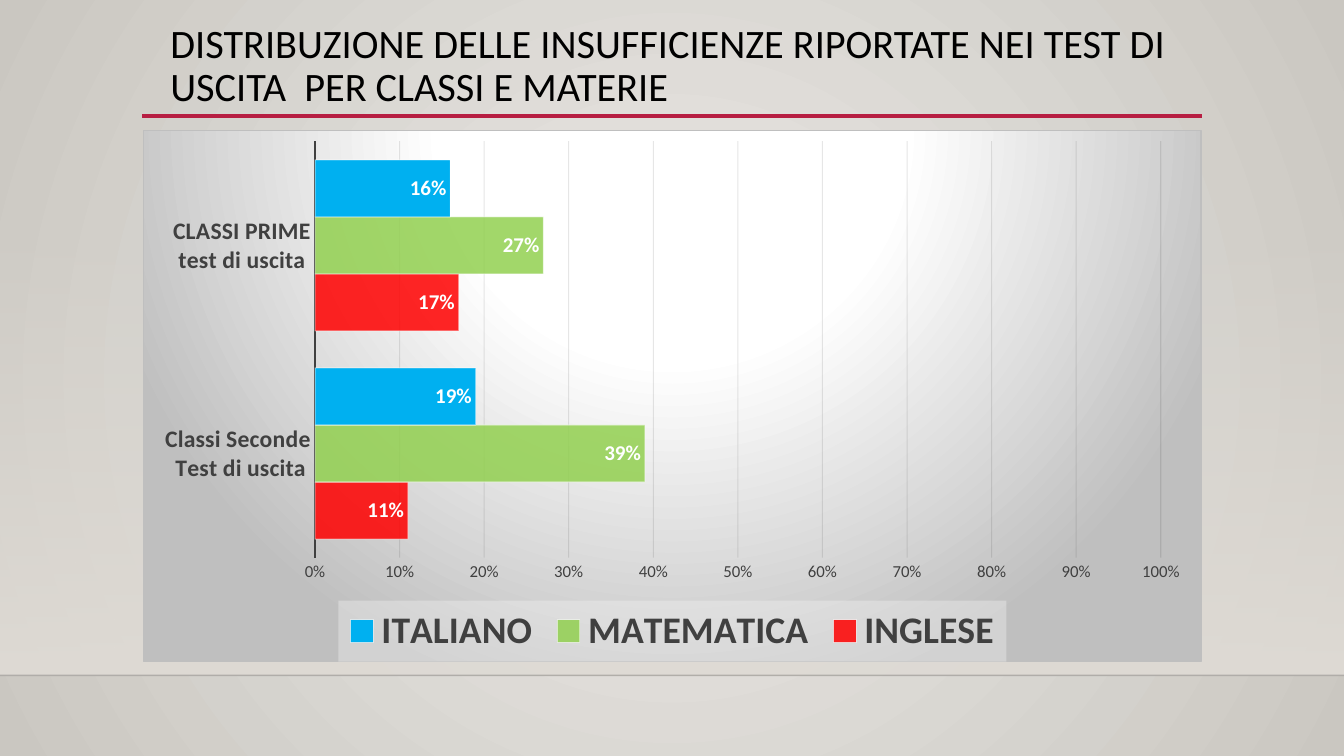
from dataclasses import dataclass

import lxml.etree
import pptx
import pptx.chart.data
import pptx.dml.color
import pptx.enum.chart
import pptx.enum.shapes
import pptx.enum.text
import pptx.oxml
import pptx.oxml.ns
import pptx.util

Cm, Pt = pptx.util.Cm, pptx.util.Pt
qn = pptx.oxml.ns.qn
NS = " ".join(pptx.oxml.ns.nsdecls(p) for p in ("a", "c"))
WIDE, HIGH = 33.87, 19.05
FONT, DARK = "Calibri", "404040"


@dataclass
class Rule:
    left: float
    right: float
    top: float
    color: str
    width: float
    alpha: int = 100


@dataclass
class Subject:
    name: str
    color: str
    alpha: int
    vals: tuple[float, float]


RULES = [
    Rule(0, WIDE, 17.02, "000001", 1, 20),
    Rule(3.58, 30.28, 2.92, "B71E42", 2.5),
]
CLASSES = ["Classi Seconde\n Test di uscita", "CLASSI PRIME\ntest di uscita"]
SUBJECTS = [
    Subject("INGLESE", "FF0000", 85, (0.11, 0.17)),
    Subject("MATEMATICA", "92D050", 85, (0.39, 0.27)),
    Subject("ITALIANO", "00B0F0", 100, (0.19, 0.16)),
]


def rgb(color: str):
    return pptx.dml.color.RGBColor.from_string(color)


def fade(fill, color: str, alpha: int = 100) -> None:
    """Fill with a solid colour at the given opacity in percent."""
    fill.solid()
    fill.fore_color.rgb = rgb(color)
    if alpha < 100:
        node = fill._xPr.find(qn("a:solidFill"))[0]
        lxml.etree.SubElement(node, qn("a:alpha")).set("val", str(alpha * 1000))


def stroke(line, color: str, width: float, alpha: int = 100) -> None:
    fade(line.fill, color, alpha)
    line.width = Pt(width)


def blend(stops: list[tuple], shape: str):
    """Gradient fill from (position, colour, opacity) stops."""
    marks = "".join(
        f'<a:gs pos="{pos * 1000}"><a:srgbClr val="{color}">'
        f'<a:alpha val="{alpha * 1000}"/></a:srgbClr></a:gs>'
        for pos, color, alpha in stops
    )
    return pptx.oxml.parse_xml(
        f"<a:gradFill {NS} rotWithShape=\"1\"><a:gsLst>{marks}</a:gsLst>{shape}</a:gradFill>"
    )


def circle(left: int, top: int, right: int, bottom: int) -> str:
    return (
        f'<a:path path="circle"><a:fillToRect l="{left * 1000}" t="{top * 1000}" '
        f'r="{right * 1000}" b="{bottom * 1000}"/></a:path>'
    )


def swap(fill, grad) -> None:
    """Put a gradient in place of a solid fill."""
    fill.solid()
    old = fill._xPr.find(qn("a:solidFill"))
    old.getparent().replace(old, grad)


def style(font, size: float, color: str, bold: bool = False) -> None:
    font.name, font.size, font.bold = FONT, Pt(size), bold
    font.color.rgb = rgb(color)


def write(frame, text: str, *, size: float, color: str, space: float = 1) -> None:
    frame.word_wrap = True
    frame.auto_size = pptx.enum.text.MSO_AUTO_SIZE.NONE
    frame.vertical_anchor = pptx.enum.text.MSO_ANCHOR.TOP
    para = frame.paragraphs[0]
    para.alignment = pptx.enum.text.PP_ALIGN.LEFT
    para.line_spacing = space
    run = para.add_run()
    run.text = text
    style(run.font, size, color)


def place(shape, left: float, top: float, width: float, height: float) -> None:
    shape.left, shape.top = Cm(left), Cm(top)
    shape.width, shape.height = Cm(width), Cm(height)


def draw_rule(slide, rule: Rule) -> None:
    line = slide.shapes.add_connector(
        pptx.enum.shapes.MSO_CONNECTOR.STRAIGHT,
        Cm(rule.left), Cm(rule.top), Cm(rule.right), Cm(rule.top),
    )
    stroke(line.line, rule.color, rule.width, rule.alpha)
    lxml.etree.SubElement(line._element.spPr, qn("a:effectLst"))


def draw_back(slide) -> None:
    swap(
        slide.background.fill,
        blend([(0, "ECEAE7", 100), (100, "CAC7C1", 100)], circle(50, 50, 50, 50)),
    )
    band = slide.shapes.add_shape(
        pptx.enum.shapes.MSO_SHAPE.RECTANGLE, 0, Cm(5.61), Cm(WIDE), Cm(11.41)
    )
    band.shadow.inherit = False
    band.line.fill.background()
    swap(
        band.fill,
        blend([(0, "DFDBD5", 0), (100, "DFDBD5", 100)], '<a:lin ang="5400000" scaled="0"/>'),
    )


def set_panel(chart) -> None:
    """Fill the chart and legend areas and fix the plot position."""
    area = pptx.oxml.parse_xml(
        f'<c:spPr {NS}><a:ln w="9525"><a:solidFill><a:srgbClr val="BFBFBF"/>'
        "</a:solidFill></a:ln></c:spPr>"
    )
    stops = [(0, "FFFFFF", 100), (39, "FFFFFF", 100), (100, "BFBFBF", 100)]
    area.insert(0, blend(stops, circle(50, -80, 50, 180)))
    root = chart._chartSpace
    root.find(qn("c:txPr")).addprevious(area)

    key = pptx.oxml.parse_xml(
        f'<c:spPr {NS}><a:solidFill><a:srgbClr val="F2F2F2">'
        '<a:alpha val="39000"/></a:srgbClr></a:solidFill></c:spPr>'
    )
    chart.legend._element.find(qn("c:txPr")).addprevious(key)

    plot = root.find(qn("c:chart")).find(qn("c:plotArea"))
    for old in plot.findall(qn("c:layout")):
        plot.remove(old)
    sizes = {"x": 0.162, "y": 0.02, "w": 0.8, "h": 0.784}
    parts = "".join(f'<c:{k} val="{v}"/>' for k, v in sizes.items())
    plot.insert(0, pptx.oxml.parse_xml(
        f'<c:layout {NS}><c:manualLayout><c:layoutTarget val="inner"/>'
        f'<c:xMode val="edge"/><c:yMode val="edge"/>{parts}</c:manualLayout></c:layout>'
    ))


def set_axes(chart) -> None:
    none = pptx.enum.chart.XL_TICK_MARK.NONE
    names, scale = chart.category_axis, chart.value_axis
    for axis, size, bold in ((names, 16.9, True), (scale, 12, False)):
        axis.major_tick_mark = axis.minor_tick_mark = none
        style(axis.tick_labels.font, size, DARK, bold)
    stroke(names.format.line, DARK, 1.5)
    scale.format.line.fill.background()
    scale.minimum_scale, scale.maximum_scale, scale.major_unit = 0, 1, 0.1
    scale.tick_labels.number_format = "0%"
    scale.tick_labels.number_format_is_linked = False
    stroke(scale.major_gridlines.format.line, "0D0D0D", 0.75, 10)


def draw_chart(slide) -> None:
    data = pptx.chart.data.CategoryChartData(number_format="0%")
    data.categories = CLASSES
    for item in SUBJECTS:
        data.add_series(item.name, item.vals)
    kind = pptx.enum.chart.XL_CHART_TYPE.BAR_CLUSTERED
    chart = slide.shapes.add_chart(
        kind, Cm(3.61), Cm(3.28), Cm(26.67), Cm(13.41), data
    ).chart
    style(chart.font, 10, "000000")
    chart.has_title = False
    chart.has_legend = True
    chart.legend.position = pptx.enum.chart.XL_LEGEND_POSITION.BOTTOM
    chart.legend.include_in_layout = False
    style(chart.legend.font, 26.9, DARK, True)
    plot = chart.plots[0]
    plot.gap_width, plot.overlap, plot.vary_by_categories = 65, 0, False
    for item, bars in zip(SUBJECTS, plot.series):
        fade(bars.format.fill, item.color, item.alpha)
        stroke(bars.format.line, "FFFFFF", 0.75, 50)
        labels = bars.data_labels
        labels.show_value = True
        labels.position = pptx.enum.chart.XL_LABEL_POSITION.INSIDE_END
        labels.number_format, labels.number_format_is_linked = "0%", False
        style(labels.font, 15, "FFFFFF", True)
    set_axes(chart)
    set_panel(chart)


def main() -> None:
    deck = pptx.Presentation()
    deck.slide_width, deck.slide_height = Cm(WIDE), Cm(HIGH)
    slide = deck.slides.add_slide(deck.slide_layouts[5])
    draw_back(slide)
    for rule in RULES:
        draw_rule(slide, rule)
    title = slide.shapes.title
    place(title, 4.04, 0.46, 27.33, 1.63)
    write(
        title.text_frame,
        "DISTRIBUZIONE DELLE INSUFFICIENZE RIPORTATE NEI TEST DI USCITA  PER CLASSI E MATERIE",
        size=28.8, color="000000", space=0.9,
    )
    draw_chart(slide)
    deck.save("out.pptx")


if __name__ == "__main__":
    main()
